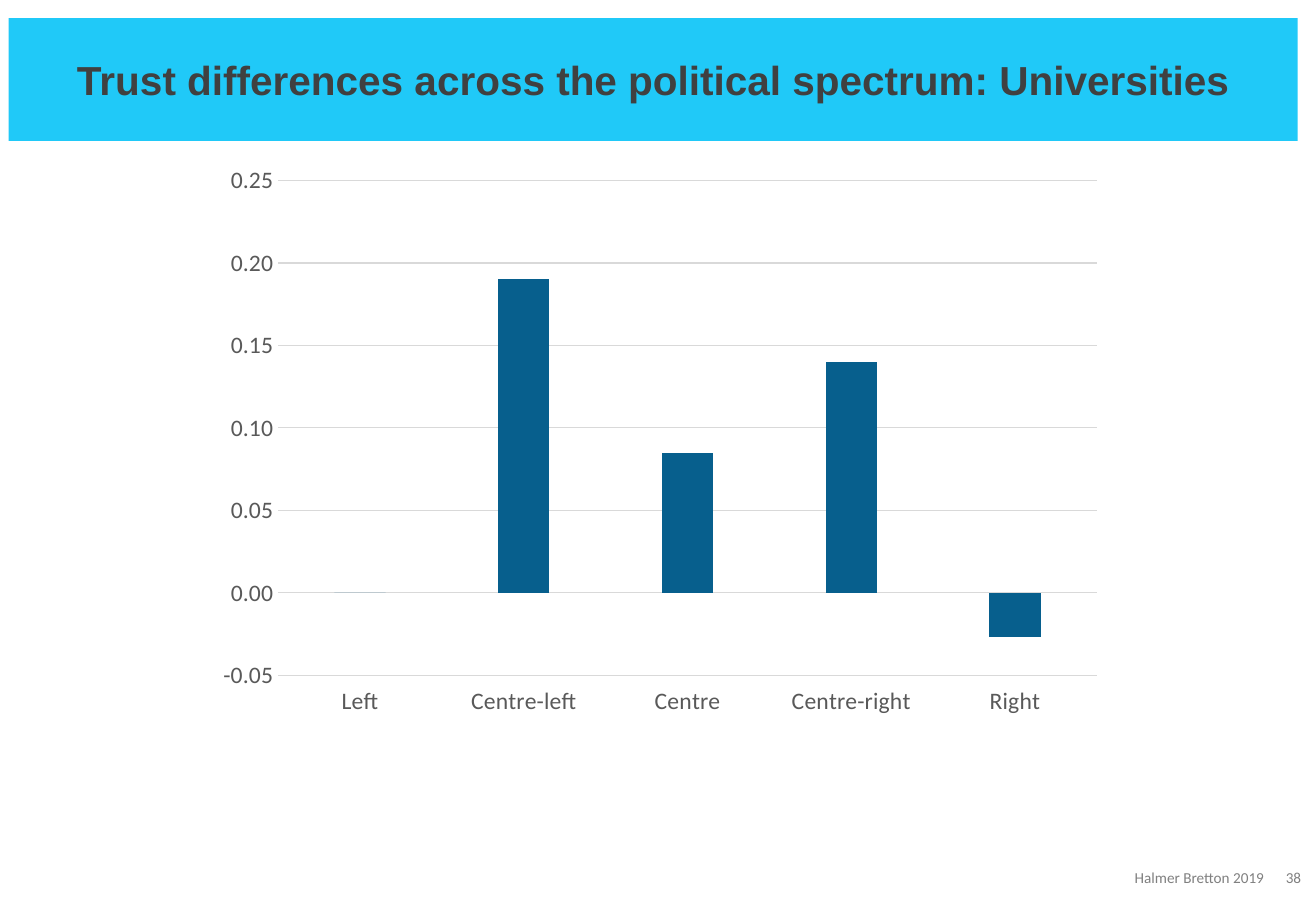
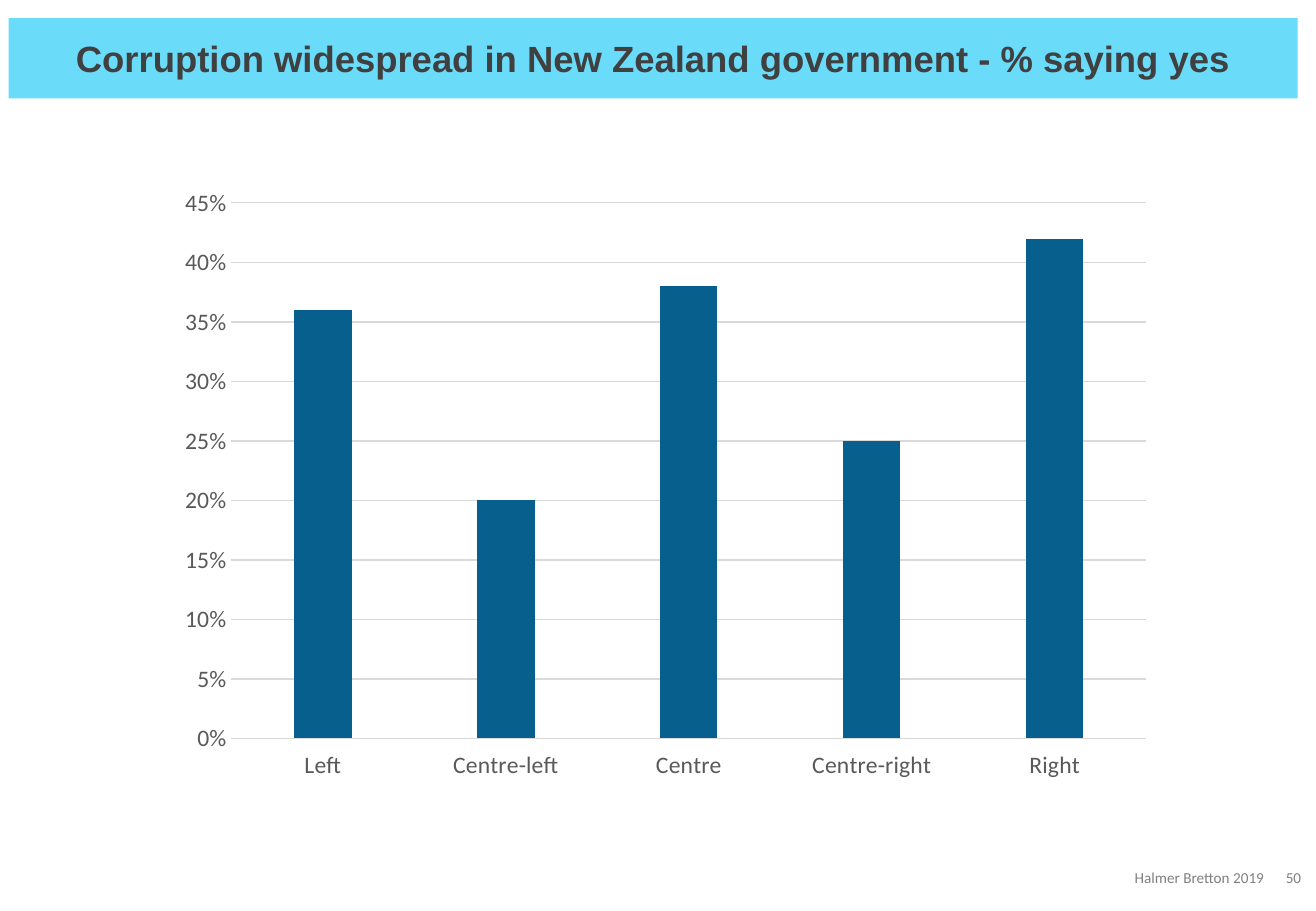
from pptx import Presentation
from pptx.chart.data import CategoryChartData
from pptx.dml.color import RGBColor
from pptx.enum.chart import XL_CHART_TYPE, XL_TICK_LABEL_POSITION, XL_TICK_MARK
from pptx.enum.shapes import MSO_SHAPE
from pptx.enum.text import MSO_ANCHOR, PP_ALIGN
from pptx.util import Cm, Pt

COLUMNS = XL_CHART_TYPE.COLUMN_CLUSTERED
LABELS_LOW = XL_TICK_LABEL_POSITION.LOW
NO_TICKS = XL_TICK_MARK.NONE
RECTANGLE = MSO_SHAPE.RECTANGLE
MIDDLE = MSO_ANCHOR.MIDDLE
CENTER, RIGHT = PP_ALIGN.CENTER, PP_ALIGN.RIGHT

BRIGHT_BLUE = RGBColor(0x20, 0xC9, 0xF8)
PALE_BLUE = RGBColor(0x6B, 0xDB, 0xFA)
BAR_BLUE = RGBColor(0x07, 0x5F, 0x8D)
TITLE_GREY = RGBColor(0x40, 0x40, 0x40)
LABEL_GREY = RGBColor(0x59, 0x59, 0x59)
FOOTER_GREY = RGBColor(0x80, 0x80, 0x80)
GRID_GREY = RGBColor(0xD9, 0xD9, 0xD9)

TITLE_FONT, BODY_FONT = "Arial", "Calibri"
FOOTER = "Halmer Bretton 2019"
SPECTRUM = ["Left", "Centre-left", "Centre", "Centre-right", "Right"]


def style_font(font, name, size, color, bold=False):
    font.name, font.size, font.bold = name, Pt(size), bold
    font.color.rgb = color


def write_line(frame, text, align):
    """Put one vertically centred line in a text frame and return its font."""
    frame.vertical_anchor = MIDDLE
    para = frame.paragraphs[0]
    para.text, para.alignment = text, align
    return para.font


def add_title_band(page, text, height, fill, size):
    band = page.shapes.add_shape(RECTANGLE, Cm(0.18), Cm(0.38), Cm(26.95), Cm(height))
    band.shadow.inherit = False
    band.fill.solid()
    band.fill.fore_color.rgb = fill
    band.line.fill.background()
    band.text_frame.word_wrap = True
    style_font(write_line(band.text_frame, text, CENTER), TITLE_FONT, size, TITLE_GREY, True)


def add_footer(page, number):
    parts = [(FOOTER, 21.72, 4.95, RIGHT, True), (str(number), 26.62, 0.84, CENTER, False)]
    for text, left, width, align, wrap in parts:
        box = page.shapes.add_textbox(Cm(left), Cm(18.03), Cm(width), Cm(0.64))
        box.text_frame.word_wrap = wrap
        style_font(write_line(box.text_frame, text, align), BODY_FONT, 9, FOOTER_GREY)


def style_grid_line(line):
    line.color.rgb = GRID_GREY
    line.width = Pt(0.75)


def add_column_chart(page, box, values, scale, number_format):
    """Draw the spectrum columns in box; scale is (minimum, maximum, step)."""
    data = CategoryChartData()
    data.categories = SPECTRUM
    data.add_series("Series 1", values)
    chart = page.shapes.add_chart(COLUMNS, *(Cm(length) for length in box), data).chart
    chart.has_legend = chart.has_title = False
    style_font(chart.font, BODY_FONT, 14, LABEL_GREY)

    plot = chart.plots[0]
    plot.vary_by_categories = False
    plot.gap_width, plot.overlap = 219, -27
    series = plot.series[0]
    series.invert_if_negative = False
    series.format.fill.solid()
    series.format.fill.fore_color.rgb = BAR_BLUE

    category_axis, value_axis = chart.category_axis, chart.value_axis
    for axis in (category_axis, value_axis):
        axis.major_tick_mark = axis.minor_tick_mark = NO_TICKS
    category_axis.tick_label_position = LABELS_LOW
    style_grid_line(category_axis.format.line)

    value_axis.minimum_scale, value_axis.maximum_scale, value_axis.major_unit = scale
    value_axis.format.line.fill.background()
    style_grid_line(value_axis.major_gridlines.format.line)
    value_axis.tick_labels.number_format = number_format
    value_axis.tick_labels.number_format_is_linked = False


def add_chart_page(deck, number, band, chart):
    page = deck.slides.add_slide(deck.slide_layouts[6])
    add_footer(page, number)
    add_title_band(page, *band)
    add_column_chart(page, *chart)


def main():
    deck = Presentation()
    deck.slide_width, deck.slide_height = Cm(27.51), Cm(19.05)
    add_chart_page(
        deck, 38,
        ("Trust differences across the political spectrum: Universities",
         2.57, BRIGHT_BLUE, 24),
        ((4.29, 3.23, 19.02, 11.99), [0, 0.19, 0.085, 0.14, -0.027],
         (-0.05, 0.25, 0.05), "0.00"))
    add_chart_page(
        deck, 50,
        ("Corruption widespread in New Zealand government - % saying yes",
         1.68, PALE_BLUE, 21.6),
        ((3.45, 3.68, 20.93, 12.88), [0.36, 0.2, 0.38, 0.25, 0.42],
         (0, 0.45, 0.05), "0%"))
    deck.save("out.pptx")


if __name__ == "__main__":
    main()
